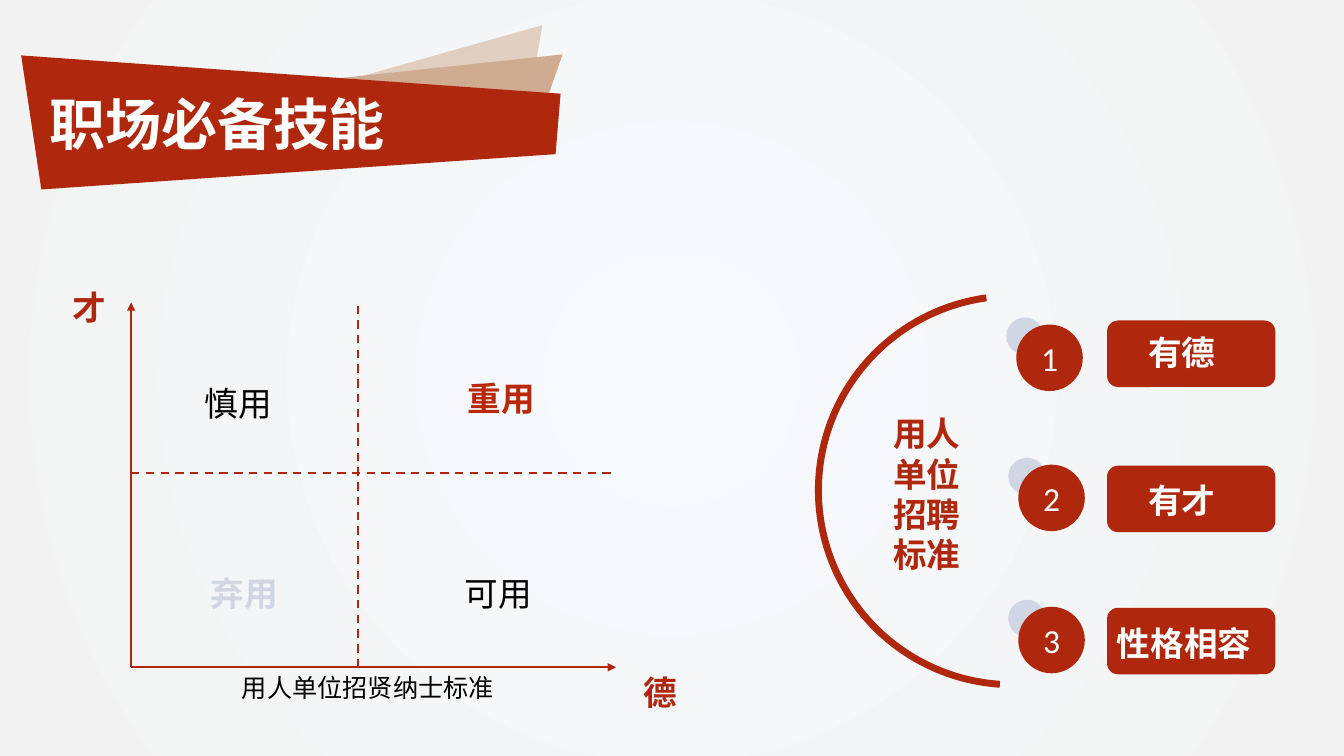
from lxml import etree
from pptx import Presentation
from pptx import util as u
from pptx.dml import color
from pptx.enum import dml, shapes, text
from pptx.oxml import ns

COLORS = {
    "red": "AF270D", "bright": "B92909", "mist": "D0D6E4", "tan": "CFAB91",
    "black": "000000", "white": "FFFFFF", "center": "F7FAFD", "edge": "F2F2F2",
}
CJK = "Noto Sans CJK SC"


class Slide:
    def __init__(self, slide):
        self.slide = slide
        self.shapes = slide.shapes

    def rgb(self, name):
        return color.RGBColor.from_string(COLORS[name])

    def child(self, parent, tag, **attrs):
        return etree.SubElement(parent, ns.qn(tag), attrs)

    def background(self, center, edge):
        fill = self.slide.background.fill
        fill.gradient()
        for stop, name, position in zip(fill.gradient_stops, (center, edge), (0, 1)):
            stop.color.rgb = self.rgb(name)
            stop.position = position
        gradient = self.slide.element.find(".//" + ns.qn("a:gradFill"))
        gradient.remove(gradient.find(ns.qn("a:lin")))
        circle = self.child(gradient, "a:path", path="circle")
        self.child(circle, "a:fillToRect", l="50000", t="50000", r="50000", b="50000")

    def paint(self, shape, fill, alpha=None):
        shape.shadow.inherit = False
        shape.fill.solid()
        shape.fill.fore_color.rgb = self.rgb(fill)
        shape.line.fill.background()
        if alpha:
            solid = shape.element.spPr.find(ns.qn("a:solidFill"))
            self.child(solid[0], "a:alpha", val=str(alpha * 1000))

    def preset(self, kind, x, y, w, h, fill):
        shape = self.shapes.add_shape(kind, *map(u.Inches, (x, y, w, h)))
        self.paint(shape, fill)
        return shape

    def polygon(self, points, fill, alpha=None):
        corners = [(u.Inches(x), u.Inches(y)) for x, y in points]
        builder = self.shapes.build_freeform(*corners[0], scale=1.0)
        builder.add_line_segments(corners[1:], close=True)
        self.paint(builder.convert_to_shape(), fill, alpha)

    def line(self, start, end, arrow=False):
        link = self.shapes.add_connector(
            shapes.MSO_CONNECTOR.STRAIGHT, *map(u.Inches, start + end))
        link.line.color.rgb = self.rgb("red")
        link.line.width = u.Pt(1.5)
        if arrow:
            self.child(link.line._get_or_add_ln(), "a:tailEnd", type="triangle")
        else:
            link.line.dash_style = dml.MSO_LINE.DASH
        self.child(link.element.spPr, "a:effectLst")

    def run(self, paragraph, words, ink, size, bold, font):
        run = paragraph.add_run()
        run.text = words
        run.font.name = font
        run.font.size = u.Pt(size)
        run.font.bold = bold
        run.font.color.rgb = self.rgb(ink)
        self.child(run.font._element, "a:ea", typeface=CJK)

    def label(self, words, x, y, w, h=0.5, ink="red", size=24, bold=True, font=CJK):
        box = self.shapes.add_textbox(*map(u.Inches, (x, y, w, h)))
        box.text_frame.word_wrap = True
        self.run(box.text_frame.paragraphs[0], words, ink, size, bold, font)
        return box.text_frame

    def badge(self, number, x, y):
        oval = shapes.MSO_SHAPE.OVAL
        self.preset(oval, x, y, 0.37, 0.37, "mist")
        disc = self.preset(oval, x + 0.1, y + 0.07, 0.66, 0.66, "red")
        disc.text_frame.vertical_anchor = text.MSO_ANCHOR.MIDDLE
        paragraph = disc.text_frame.paragraphs[0]
        paragraph.alignment = text.PP_ALIGN.CENTER
        self.run(paragraph, number, "white", 24, False, "Calibri")

    def arc(self, x, y, size, rotation, adjustments):
        arc = self.preset(shapes.MSO_SHAPE.BLOCK_ARC, x, y, size, size, "red")
        arc.rotation = rotation
        for index, value in enumerate(adjustments):
            arc.adjustments[index] = value
        arc.line.color.rgb = self.rgb("red")
        arc.line.width = u.Pt(1)


def draw_matrix(page):
    left, right, top, bottom = 1.3, 6.11, 3, 6.62
    middle_x, middle_y = 3.55, 4.69
    page.line((left, bottom), (right, bottom), arrow=True)
    page.line((left, bottom), (left, top), arrow=True)
    page.line((left, middle_y), (right, middle_y))
    page.line((middle_x, bottom), (middle_x, top))
    page.label("德", 6.28, bottom, 0.68)
    page.label("才", 0.62, 2.8, 0.68)
    page.label("重用", 4.54, 3.7, 0.93, ink="bright")
    page.label("可用", 4.51, 5.63, 1.29, ink="black", bold=False)
    page.label("慎用", 1.93, 3.75, 1.29, ink="black", bold=False)
    page.label("弃用", 1.99, 5.63, 0.93, ink="mist")
    page.label("用人单位招贤纳士标准", 2.3, bottom, 3.81, 0.4,
               ink="black", size=18, bold=False)


def draw_criteria(page):
    criteria = [
        ("有德", 3.18, 9.98, 3.15, 11.29, 3.24, 1),
        ("有才", 4.62, 10, 4.54, 11.29, 4.71, 1),
        ("性格相容", 6.03, 10, 5.95, 10.98, 6.13, 1.6),
    ]
    for number, row in enumerate(criteria, 1):
        quality, pill_y, badge_x, badge_y, word_x, word_y, word_w = row
        page.preset(shapes.MSO_SHAPE.ROUNDED_RECTANGLE, 10.98, pill_y, 1.67, 0.66, "red")
        page.badge(str(number), badge_x, badge_y)
        page.label(quality, word_x, word_y, word_w, ink="white")
    page.label("用人单位招聘标准", 8.76, 4.05, 0.92, 1.7)
    page.arc(8.09, 2.91, 3.91, 274, (108, 208.8, 0.014))


def draw_banner(page):
    page.polygon([(1.02, 1.48), (5.38, 0.25), (5.2, 1.3), (1.36, 1.82)], "tan", 52)
    page.polygon([(1.08, 1.02), (5.58, 0.54), (5.23, 1.54), (1.36, 1.42)], "tan")
    page.polygon([(0.21, 0.55), (5.56, 0.93), (5.51, 1.53), (0.41, 1.88)], "red")
    title = page.label("职场必备技能", 0.39, 0.54, 5.33, 1.45,
                       ink="white", size=40, font="Calibri")
    title.vertical_anchor = text.MSO_ANCHOR.MIDDLE
    title.paragraphs[0].line_spacing = 0.9


def main():
    deck = Presentation()
    deck.slide_width = u.Inches(13.33)
    deck.slide_height = u.Inches(7.5)
    page = Slide(deck.slides.add_slide(deck.slide_layouts[6]))
    page.background("center", "edge")
    draw_matrix(page)
    draw_criteria(page)
    draw_banner(page)
    deck.save("out.pptx")


if __name__ == "__main__":
    main()
